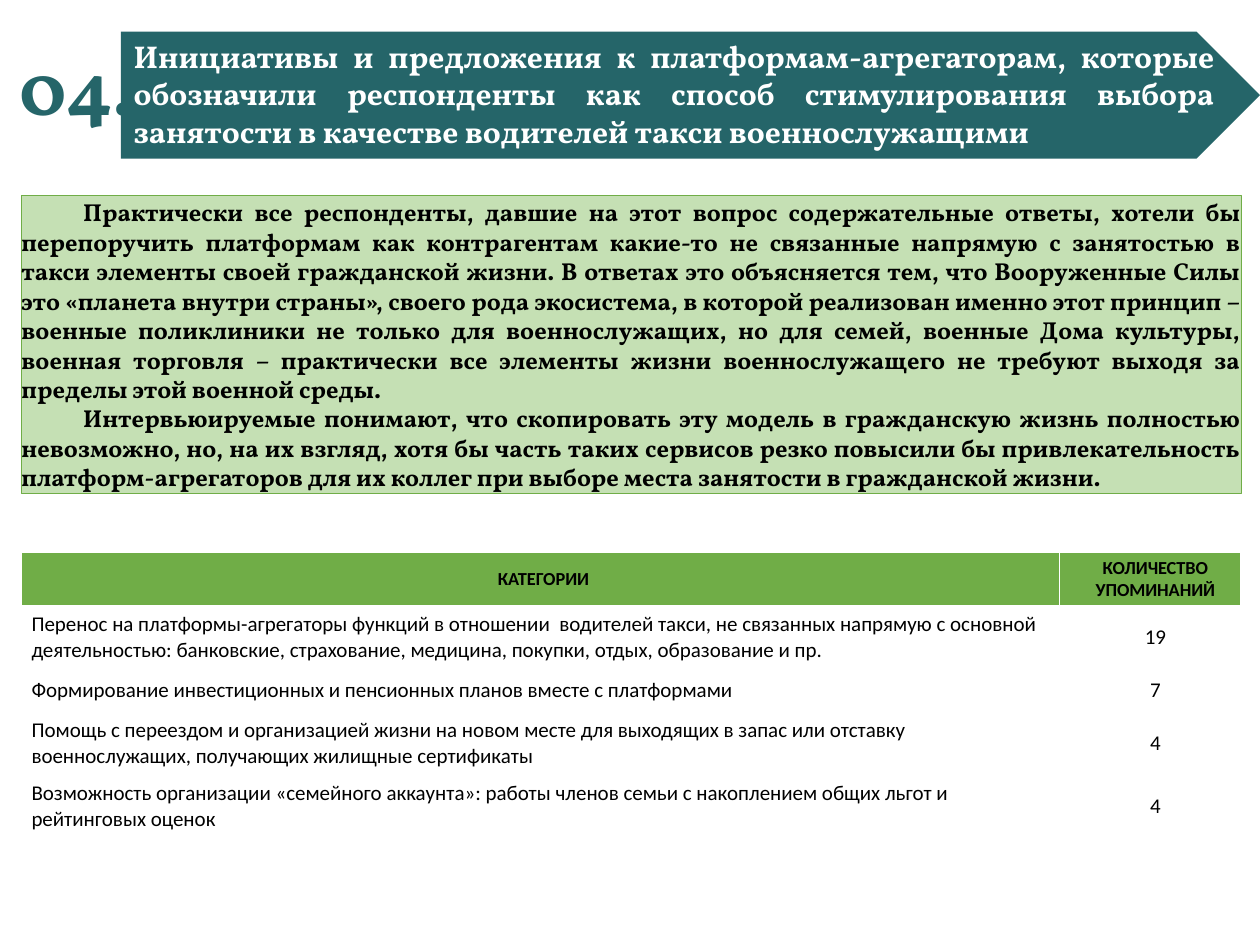
from lxml.etree import SubElement
from pptx import Presentation
from pptx.dml.color import RGBColor
from pptx.enum.shapes import MSO_SHAPE as Shape
from pptx.enum.text import MSO_ANCHOR as Anchor, MSO_AUTO_SIZE as AutoSize, PP_ALIGN as Align
from pptx.oxml.ns import qn
from pptx.util import Inches, Pt

COLORS = {
    "teal": "256569",
    "green": "70AD47",
    "light_green": "C5E0B4",
    "white": "FFFFFF",
    "black": "000000",
}

HEADING = (
    "Инициативы и предложения к платформам-агрегаторам, которые обозначили респонденты "
    "как способ стимулирования выбора занятости в качестве водителей такси военнослужащими"
)
FINDINGS = [
    "Практически все респонденты, давшие на этот вопрос содержательные ответы, хотели бы "
    "перепоручить платформам как контрагентам какие-то не связанные напрямую с занятостью в такси "
    "элементы своей гражданской жизни. В ответах это объясняется тем, что Вооруженные Силы это "
    "«планета внутри страны», своего рода экосистема, в которой реализован именно этот принцип – "
    "военные поликлиники не только для военнослужащих, но для семей, военные Дома культуры, "
    "военная торговля – практически все элементы жизни военнослужащего не требуют выходя за "
    "пределы этой военной среды.",
    "Интервьюируемые понимают, что скопировать эту модель в гражданскую жизнь полностью "
    "невозможно, но, на их взгляд, хотя бы часть таких сервисов резко повысили бы "
    "привлекательность платформ-агрегаторов для их коллег при выборе места занятости "
    "в гражданской жизни.",
]
MENTIONS = [
    ("КАТЕГОРИИ ", "КОЛИЧЕСТВО УПОМИНАНИЙ"),
    ("Перенос на платформы-агрегаторы функций в отношении  водителей такси, не связанных напрямую "
     "с основной деятельностью: банковские, страхование, медицина, покупки, отдых, образование и пр.",
     "19"),
    ("Формирование инвестиционных и пенсионных планов вместе с платформами", "7"),
    ("Помощь с переездом и организацией жизни на новом месте для выходящих в запас или отставку "
     "военнослужащих, получающих жилищные сертификаты", "4"),
    ("Возможность организации «семейного аккаунта»: работы членов семьи с накоплением общих льгот "
     "и рейтинговых оценок", "4"),
]


def color(name):
    return RGBColor.from_string(COLORS[name])


def write(frame, texts, size, font="Vollkorn", ink="black", bold=True,
          align=Align.LEFT, anchor=Anchor.TOP, indent=0):
    frame.word_wrap = True
    frame.vertical_anchor = anchor
    for index, text in enumerate(texts):
        paragraph = frame.paragraphs[0] if index == 0 else frame.add_paragraph()
        paragraph.alignment = align
        if indent:
            properties = paragraph._p.get_or_add_pPr()
            properties.set("marL", "0")
            properties.set("indent", str(Inches(indent)))
        run = paragraph.add_run()
        run.text = text
        run.font.name = font
        run.font.size = Pt(size)
        run.font.bold = bold
        run.font.color.rgb = color(ink)


class SlideBuilder:
    def __init__(self, presentation):
        self.slide = presentation.slides.add_slide(presentation.slide_layouts[5])
        self.shapes = self.slide.shapes

    def block(self, preset, box, fill, line=None):
        shape = self.shapes.add_shape(preset, *map(Inches, box))
        shape.shadow.inherit = False
        shape.fill.solid()
        shape.fill.fore_color.rgb = color(fill)
        if line:
            shape.line.color.rgb = color(line)
            shape.line.width = Pt(0.5)
        else:
            shape.line.fill.background()
        return shape

    def title(self, text, box, **style):
        title = self.shapes.title
        title.left, title.top, title.width, title.height = map(Inches, box)
        title.text_frame.auto_size = AutoSize.NONE
        write(title.text_frame, [text], **style)
        self.shapes._spTree.append(title._element)

    def panel(self, texts, box, fill, line, **style):
        frame = self.block(Shape.RECTANGLE, box, fill, line).text_frame
        frame.margin_left = frame.margin_top = frame.margin_right = frame.margin_bottom = 0
        write(frame, texts, **style)

    def text(self, text, box, **style):
        write(self.shapes.add_textbox(*map(Inches, box)).text_frame, [text], **style)

    def borders(self, cell, line):
        properties = cell._tc.get_or_add_tcPr()
        for index, side in enumerate(("lnL", "lnR", "lnT", "lnB")):
            border = SubElement(properties, qn(f"a:{side}"), w=str(Pt(1)))
            fill = SubElement(border, qn("a:solidFill"))
            SubElement(fill, qn("a:srgbClr"), val=COLORS[line])
            properties.insert(index, border)

    def table(self, rows, position, widths, heights):
        left, top = position
        box = (left, top, sum(widths), sum(heights))
        table = self.shapes.add_table(len(rows), len(widths), *map(Inches, box)).table
        table.horz_banding = False
        for column, width in zip(table.columns, widths):
            column.width = Inches(width)
        for row_index, (row, height) in enumerate(zip(rows, heights)):
            table.rows[row_index].height = Inches(height)
            header = row_index == 0
            for column_index, text in enumerate(row):
                cell = table.cell(row_index, column_index)
                cell.margin_left = Inches(0.08)
                cell.margin_right = 0
                cell.margin_top = cell.margin_bottom = Inches(0.04)
                cell.vertical_anchor = Anchor.MIDDLE
                if header:
                    cell.fill.solid()
                    cell.fill.fore_color.rgb = color("green")
                else:
                    cell.fill.background()
                self.borders(cell, "white")
                centered = header or column_index == 1
                write(cell.text_frame, [text], size=10.5 if header else 12, font="Calibri",
                      bold=header, align=Align.CENTER if centered else Align.LEFT)


def main():
    presentation = Presentation()
    presentation.slide_width = Inches(10)
    presentation.slide_height = Inches(7.5)
    builder = SlideBuilder(presentation)
    builder.block(Shape.PENTAGON, (0.96, 0.25, 9.04, 1.01), "teal")
    builder.title(HEADING, (0.96, 0.24, 8.78, 1.01), size=18, ink="white", align=Align.JUSTIFY)
    builder.panel(FINDINGS, (0.17, 1.55, 9.68, 2.37), "light_green", "green",
                  size=14, align=Align.JUSTIFY, anchor=Anchor.MIDDLE, indent=0.49)
    builder.text("04.", (0.06, 0.26, 1.21, 0.84), size=44, ink="teal")
    builder.table(MENTIONS, (0.17, 4.38), (8.24, 1.44), (0.42, 0.5, 0.34, 0.5, 0.5))
    presentation.save("out.pptx")


if __name__ == "__main__":
    main()
